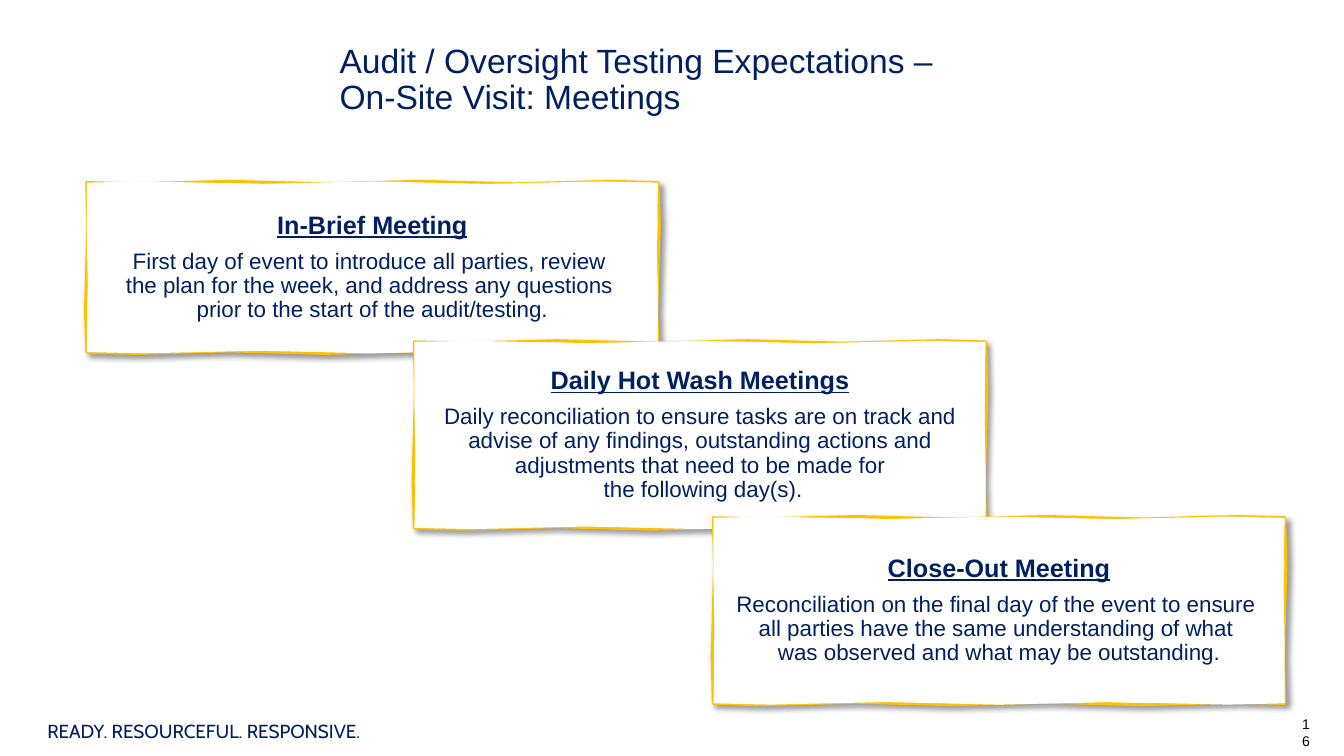
import copy
import math

import pptx
import pptx.dml.color
import pptx.enum.text
import pptx.oxml
import pptx.oxml.ns
import pptx.util

Pt = pptx.util.Pt
RGB = pptx.dml.color.RGBColor
Align = pptx.enum.text.PP_ALIGN
Anchor = pptx.enum.text.MSO_ANCHOR
qn = pptx.oxml.ns.qn

HUES = {"navy": "002060", "gold": "FFC000", "white": "FFFFFF", "black": "000000"}

# Text formats
TITLE = {"name": "Arial", "size": Pt(24)}
HEAD = {"name": "Arial", "size": Pt(18), "bold": True, "underline": True}
BODY = {"name": "Arial", "size": Pt(16), "bold": False, "underline": False}
MOTTO = {"name": "Cabin", "size": Pt(13.5)}
PAGE = {"name": "Arial", "size": Pt(10)}

# Cards: left, top, height, heading, body
WIDTH = 408
CARDS = [
    (62, 130.5, 121, "In-Brief Meeting",
     "First day of event to introduce all parties, review \v"
     "the plan for the week, and address any questions \v"
     "prior to the start of the audit/testing."),
    (296, 244.3, 132.7, "Daily Hot Wash Meetings",
     "Daily reconciliation to ensure tasks are on track and advise of any "
     "findings, outstanding actions and adjustments that need to be made for\v"
     " the following day(s)."),
    (509.6, 369.9, 132.5, "Close-Out Meeting",
     "Reconciliation on the final day of the event to ensure \v"
     "all parties have the same understanding of what \v"
     "was observed and what may be outstanding."),
]

SHADOW = (
    '<a:outerShdw xmlns:a="http://schemas.openxmlformats.org/drawingml/2006/main" '
    'blurRad="50800" dist="38100" dir="2700000" algn="tl" rotWithShape="0">'
    f'<a:srgbClr val="{HUES["black"]}"><a:alpha val="40000"/></a:srgbClr></a:outerShdw>'
)


def hue(name):
    return RGB.from_string(HUES[name])


def put(para, text, style, tint="navy", **form):
    """Write one paragraph, with its line breaks in the same style."""
    para.text = text
    for key, value in form.items():
        setattr(para, key, value)
    for run in para.runs:
        for key, value in style.items():
            setattr(run.font, key, value)
        run.font.color.rgb = hue(tint)
    look = para.runs[0]._r.find(qn("a:rPr"))
    for gap in para._p.findall(qn("a:br")):
        gap.insert(0, copy.deepcopy(look))


def label(slide, box, text, style, anchor, pads, tint="navy", **form):
    frame = slide.shapes.add_textbox(*map(Pt, box)).text_frame
    frame.word_wrap = True
    frame.vertical_anchor = anchor
    frame.margin_left = frame.margin_right = Pt(pads[0])
    frame.margin_top = frame.margin_bottom = Pt(pads[1])
    put(frame.paragraphs[0], text, style, tint, **form)


def sketch(slide, left, top, high, swing, step):
    """Draw a white box whose four edges waver in a slow sine."""
    ends = [(left, top), (left + WIDTH, top),
            (left + WIDTH, top + high), (left, top + high)]
    points = []
    for side, (x, y) in enumerate(ends):
        x2, y2 = ends[(side + 1) % 4]
        span = math.hypot(x2 - x, y2 - y)
        count = round(span / step)
        for spot in range(count):
            t = spot / count
            off = swing * math.sin(math.pi * spot / 2) if spot else 0
            points.append((x + (x2 - x) * t + off * (y2 - y) / span,
                           y + (y2 - y) * t + off * (x2 - x) / span))
    pen = slide.shapes.build_freeform(Pt(points[0][0]), Pt(points[0][1]))
    pen.add_line_segments([(Pt(x), Pt(y)) for x, y in points[1:]], close=True)
    shape = pen.convert_to_shape()
    shape.fill.solid()
    shape.fill.fore_color.rgb = hue("white")
    shape.line.fill.background()
    shape.shadow.inherit = False
    return shape


def card(slide, left, top, high, head, body):
    # Gold edge with shadow
    edge = sketch(slide, left, top, high, 0.9, 34)
    edge.line.color.rgb = hue("gold")
    edge.line.width = Pt(2.25)
    glow = edge._element.spPr.find(qn("a:effectLst"))
    glow.append(pptx.oxml.parse_xml(SHADOW))
    # White face with text
    frame = sketch(slide, left, top, high, -0.9, 42).text_frame
    frame.word_wrap = True
    frame.vertical_anchor = Anchor.MIDDLE
    form = {"alignment": Align.CENTER, "line_spacing": 0.9}
    put(frame.paragraphs[0], head, HEAD, **form)
    put(frame.add_paragraph(), body, BODY, space_before=Pt(7.5), **form)


def main():
    deck = pptx.Presentation()
    deck.slide_width, deck.slide_height = Pt(960), Pt(540)
    slide = deck.slides.add_slide(deck.slide_layouts[6])

    # Title
    label(slide, (239, 25.2, 638.6, 61.9),
          "Audit / Oversight Testing Expectations – \vOn-Site Visit: Meetings",
          TITLE, Anchor.BOTTOM, (3.6, 3.6), line_spacing=0.9)

    # Stepped cards
    for item in CARDS:
        card(slide, *item)

    # Footer
    label(slide, (28.8, 506.9, 240, 30.2), "READY. RESOURCEFUL. RESPONSIVE.",
          MOTTO, Anchor.MIDDLE, (5, 2.9))
    label(slide, (923, 507.6, 20.2, 19.4), "16",
          PAGE, Anchor.TOP, (7.2, 3.6), "black")

    deck.save("out.pptx")


if __name__ == "__main__":
    main()
